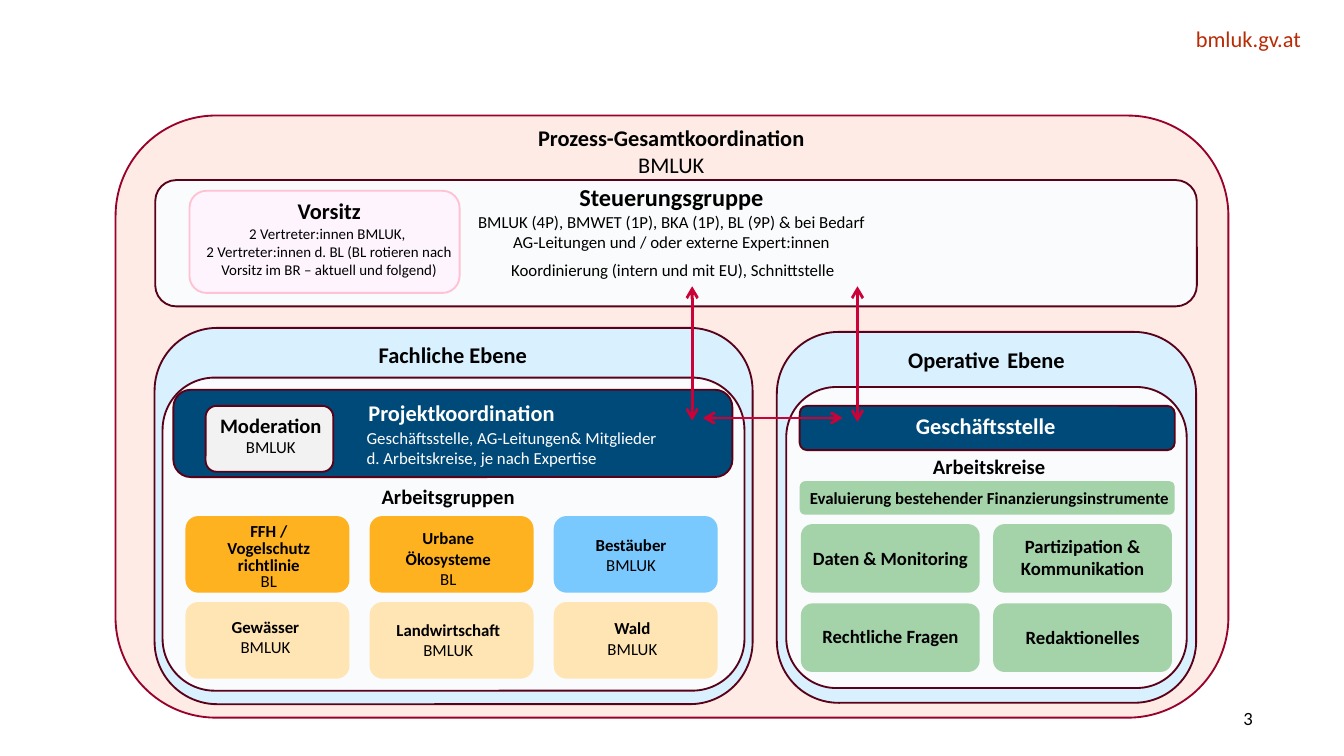
from dataclasses import dataclass
from typing import Optional

from lxml import etree
from pptx import Presentation
from pptx import util as u
from pptx.dml.color import RGBColor
from pptx.enum import shapes, text
from pptx.oxml.ns import qn

# The slide is a grid of 100 columns; rows are as high as columns are wide
WIDE = 10
HIGH = WIDE * 9 / 16
UNIT = WIDE / 100
FONT = "Calibri"
HUE = {
    "rose": "FEEBE6", "ruby": "980129", "wine": "590118", "pale": "FAFBFC",
    "sky": "D9F1FF", "navy": "004A7A", "grey": "F2F2F2", "pink": "FEF4FE",
    "blush": "FEC2D2", "cream": "FFE5B4", "gold": "FFB21F", "blue": "79C9FF",
    "green": "A4D2A9", "red": "CA0237", "brick": "B92B06",
    "black": "000000", "white": "FFFFFF",
}
MID, LEFT, RIGHT = text.PP_ALIGN.CENTER, text.PP_ALIGN.LEFT, text.PP_ALIGN.RIGHT


@dataclass
class Area:
    x: float
    y: float
    w: float
    h: float

    def place(self) -> tuple:
        return tuple(u.Inches(n * UNIT) for n in (self.x, self.y, self.w, self.h))


@dataclass
class Card:
    area: Area
    fill: str
    line: Optional[str] = None
    bend: Optional[float] = None


@dataclass
class Line:
    words: str
    size: float = 9
    bold: bool = False


@dataclass
class Label:
    area: Area
    lines: list
    hue: str = "black"
    align: int = MID
    pitch: Optional[float] = None
    inset: bool = True


@dataclass
class Team:
    name: list
    lead: str
    fill: str
    x: float
    y: float
    h: float
    w: float = 10.1
    pitch: Optional[float] = None


def tint(name: str) -> RGBColor:
    return RGBColor.from_string(HUE[name])


def style(run, size: float, bold: bool, hue: str) -> None:
    run.font.name, run.font.size, run.font.bold = FONT, u.Pt(size), bold
    run.font.color.rgb = tint(hue)


def draw_card(slide, card: Card, kind=shapes.MSO_SHAPE.ROUNDED_RECTANGLE):
    shape = slide.shapes.add_shape(kind, *card.area.place())
    shape.shadow.inherit = False
    shape.fill.solid()
    shape.fill.fore_color.rgb = tint(card.fill)
    if card.line:
        shape.line.color.rgb = tint(card.line)
        shape.line.width = u.Pt(1)
    else:
        shape.line.fill.background()
    if card.bend:
        shape.adjustments[0] = card.bend
    return shape


def write(frame, label: Label) -> None:
    frame.word_wrap = True
    if not label.inset:
        frame.margin_left = frame.margin_right = 0
        frame.margin_top = frame.margin_bottom = 0
    frame.text = "\n".join(line.words for line in label.lines)
    for par, line in zip(frame.paragraphs, label.lines):
        par.alignment = label.align
        if label.pitch:
            par.line_spacing = u.Pt(label.pitch)
        for run in par.runs:
            style(run, line.size, line.bold, label.hue)


def draw_label(slide, label: Label):
    frame = slide.shapes.add_textbox(*label.area.place()).text_frame
    write(frame, label)
    return frame


def draw_arrow(slide, x1: float, y1: float, x2: float, y2: float) -> None:
    ends = [u.Inches(n * UNIT) for n in (x1, y1, x2, y2)]
    arrow = slide.shapes.add_connector(shapes.MSO_CONNECTOR.STRAIGHT, *ends)
    arrow.line.color.rgb = tint("red")
    arrow.line.width = u.Pt(1.5)
    line = arrow.line._get_or_add_ln()
    for end in ("a:headEnd", "a:tailEnd"):
        etree.SubElement(line, qn(end), type="arrow")
    etree.SubElement(arrow._element.spPr, qn("a:effectLst"))


def head(words: str, size: float = 12) -> Line:
    return Line(words, size, True)


CARDS = [
    Card(Area(8.6, 8.6, 82.8, 44.8), "rose", "ruby"),
    Card(Area(11.55, 13.4, 77.5, 9.4), "pale", "wine"),
    Card(Area(14.1, 14.2, 20.1, 7.6), "pink", "blush"),
    # Expert level
    Card(Area(11.5, 24.4, 44.5, 28), "sky", "wine"),
    Card(Area(12.1, 28.1, 43.3, 23.3), "pale", "wine"),
    Card(Area(12.9, 29, 41.6, 6.5), "navy", "wine", 0.2),
    Card(Area(15.3, 30.2, 9.5, 4.9), "grey", "wine"),
    # Operative level
    Card(Area(57.8, 24.7, 31.2, 27.6), "sky", "wine"),
    Card(Area(58.5, 28.8, 29.8, 22.4), "pale", "wine"),
    Card(Area(59.5, 30.2, 27.9, 3.3), "navy", "wine"),
    Card(Area(59.5, 35.8, 27.9, 2.5), "green"),
]

LABELS = [
    Label(Area(72.7, 1.9, 24.1, 2), [Line("bmluk.gv.at", 12)], "brick", RIGHT, inset=False),
    Label(Area(34.3, 13.1, 31.3, 6.2), [
        head("Steuerungsgruppe", 13),
        Line("BMLUK (4P), BMWET (1P), BKA (1P), BL (9P) & bei Bedarf "
             "AG-Leitungen und / oder externe Expert:innen")]),
    Label(Area(34.1, 18.8, 31.9, 2.5),
          [Line("Koordinierung (intern und mit EU), Schnittstelle")]),
    Label(Area(13, 14.2, 23, 7.1), [
        head("Vorsitz"),
        Line("2 Vertreter:innen BMLUK, ", 8),
        Line("2 Vertreter:innen d. BL (BL rotieren nach Vorsitz im BR "
             "– aktuell und folgend)", 8)]),
    Label(Area(21.4, 24.9, 24.6, 3), [head("Fachliche Ebene")]),
    Label(Area(26.1, 29.2, 16.5, 3), [head("Projektkoordination")], "white"),
    Label(Area(26.3, 31.3, 24.7, 4), [
        Line("Geschäftsstelle, AG-Leitungen& Mitglieder d. Arbeitskreise, "
             "je nach Expertise")], "white", LEFT),
    Label(Area(15.1, 30.2, 10.1, 4.5), [head("Moderation", 11), Line("BMLUK")]),
    Label(Area(25.8, 35.5, 15.1, 2.9), [head("Arbeitsgruppen", 11)]),
    Label(Area(65.1, 30.2, 16.5, 3), [head("Geschäftsstelle")], "white"),
    Label(Area(63.5, 33.3, 20.2, 2.9), [head("Arbeitskreise", 11)]),
    Label(Area(58.9, 35.8, 29.4, 2.5),
          [head("Evaluierung bestehender Finanzierungsinstrumente", 9)]),
]

# Three columns by two rows; x and y place each label
TEAMS = [
    Team(["FFH / Vogelschutz", "richtlinie"], "BL", "gold", 14.7, 38.5, 6.1, 10.6, 9),
    Team(["Urbane Ökosysteme"], "BL", "gold", 28.3, 38.8, 5.6),
    Team(["Bestäuber"], "BMLUK", "blue", 41.9, 39.3, 4),
    Team(["Gewässer"], "BMLUK", "cream", 14.7, 45.4, 4),
    Team(["Landwirtschaft"], "BMLUK", "cream", 28.3, 45.6, 4),
    Team(["Wald"], "BMLUK", "cream", 42, 45.5, 4),
]

# Two columns by two rows: name, label top, label height
CIRCLES = [
    ("Daten & Monitoring", 40.2, 2.7),
    ("Partizipation & Kommunikation", 39.3, 4.4),
    ("Rechtliche Fragen", 46, 2.7),
    ("Redaktionelles", 46.1, 2.7),
]

ARROWS = [(51.5, 31.3, 51.5, 21.3), (63.8, 31.4, 63.8, 21.3), (52.3, 31.1, 62.7, 31.1)]


def main() -> None:
    deck = Presentation()
    deck.slide_width, deck.slide_height = u.Inches(WIDE), u.Inches(HIGH)
    slide = deck.slides.add_slide(deck.slide_layouts[6])

    for card in CARDS:
        draw_card(slide, card)
    for label in LABELS:
        draw_label(slide, label)

    # Heading with a taller gap between its words
    frame = draw_label(slide, Label(Area(63.8, 24.4, 19.2, 4), [head("Operative")]))
    for words, size in ((" ", 18), ("Ebene", 12)):
        run = frame.paragraphs[0].add_run()
        run.text = words
        style(run, size, True, "black")

    # Working groups
    for i, team in enumerate(TEAMS):
        row, col = divmod(i, 3)
        draw_card(slide, Card(Area(13.8 + 13.7 * col, 38.4 + 6.4 * row, 12.2, 5.7), team.fill))
        lines = [head(name, 9) for name in team.name] + [Line(team.lead)]
        draw_label(slide, Label(Area(team.x, team.y, team.w, team.h), lines, pitch=team.pitch))

    # Working circles
    for i, (name, top, tall) in enumerate(CIRCLES):
        row, col = divmod(i, 2)
        left = 59.6 + 14.3 * col
        draw_card(slide, Card(Area(left, 39 + 5.9 * row, 13.3, 5.1), "green"))
        draw_label(slide, Label(Area(left - 0.2, top, 13.7, tall), [head(name, 10)]))

    for ends in ARROWS:
        draw_arrow(slide, *ends)

    # Main heading and page number
    title = Card(Area(33.7, 8.85, 32.5, 4.4), "rose")
    frame = draw_card(slide, title, shapes.MSO_SHAPE.RECTANGLE).text_frame
    write(frame, Label(title.area, [head("Prozess-Gesamtkoordination"), Line("BMLUK", 12)],
                       inset=False))
    frame.vertical_anchor = text.MSO_ANCHOR.BOTTOM
    page = draw_label(slide, Label(Area(82.7, 52.35, 10.5, 2.2), [Line("3", 10)],
                                   align=RIGHT, inset=False))
    page.vertical_anchor = text.MSO_ANCHOR.MIDDLE

    deck.save("out.pptx")


if __name__ == "__main__":
    main()
